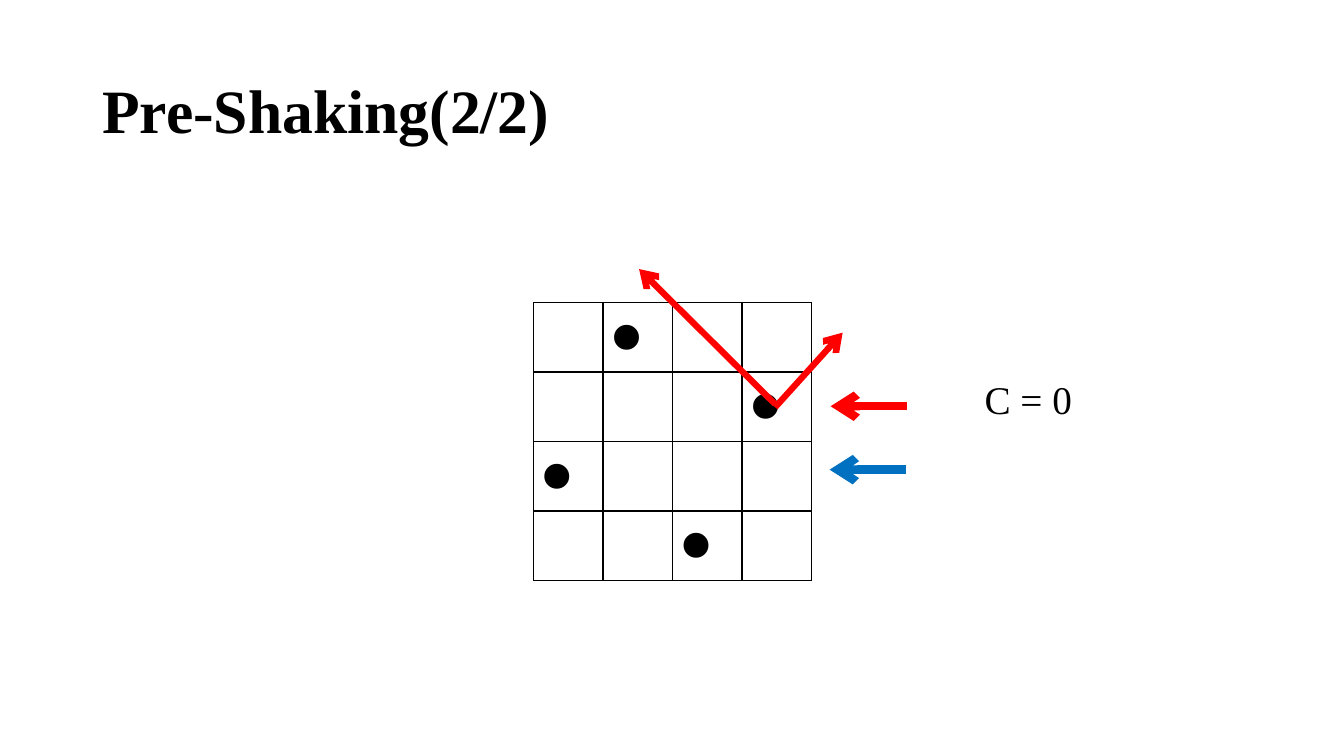
"""Build the Pre-Shaking slide: a four-queens board with attack arrows."""
from lxml import etree
from pptx import Presentation
from pptx.dml.color import RGBColor
from pptx.enum import shapes, text
from pptx.oxml import ns
from pptx.util import Pt

BLACK = RGBColor(0x00, 0x00, 0x00)
RED = RGBColor(0xFF, 0x00, 0x00)
BLUE = RGBColor(0x00, 0x70, 0xC0)
SERIF = "Times New Roman"
CELL = 49.68
QUEEN_COLUMNS = (1, 3, 0, 2)


def write(paragraph, words, color=BLACK, **font_format):
    """Write one formatted span into a paragraph."""
    span = paragraph.add_run()
    span.text = words
    span.font.color.rgb = color
    for name, value in font_format.items():
        setattr(span.font, name, value)


def add_label(page, words, left, top, width, height, layout, font_format):
    """Add a wrapped text box with one line of text."""
    box = page.shapes.add_textbox(Pt(left), Pt(top), Pt(width), Pt(height))
    frame = box.text_frame
    frame.word_wrap = True
    frame.vertical_anchor = layout["anchor"]
    paragraph = frame.paragraphs[0]
    paragraph.line_spacing = 0.9
    paragraph.space_before = Pt(layout["before"])
    write(paragraph, words, name=SERIF, **font_format)


def add_arrow(page, start, end, color, weight):
    """Add a straight arrow that points at its end."""
    arrow = page.shapes.add_connector(
        shapes.MSO_CONNECTOR.STRAIGHT, *(Pt(value) for value in (*start, *end)))
    arrow.line.color.rgb = color
    arrow.line.width = Pt(weight)
    properties = arrow.line._get_or_add_ln()
    etree.SubElement(properties, ns.qn("a:tailEnd"), type="arrow")
    etree.SubElement(arrow._element.spPr, ns.qn("a:effectLst"))


def add_borders(cell):
    """Draw a thin black line on every side of a cell."""
    properties = cell._tc.get_or_add_tcPr()
    for side in ("lnL", "lnR", "lnT", "lnB"):
        border = etree.SubElement(properties, ns.qn(f"a:{side}"), w=str(Pt(1)))
        fill = etree.SubElement(border, ns.qn("a:solidFill"))
        etree.SubElement(fill, ns.qn("a:srgbClr"), val=str(BLACK))


def add_board(page, left, top):
    """Add the board as a table with one queen in each row."""
    size = len(QUEEN_COLUMNS)
    board = page.shapes.add_table(
        size, size, Pt(left), Pt(top), Pt(size * CELL), Pt(size * CELL)).table
    board.first_row = board.horz_banding = False
    for column in board.columns:
        column.width = Pt(CELL)
    for row in board.rows:
        row.height = Pt(CELL)
    for cell in board.iter_cells():
        add_borders(cell)
        cell.fill.background()
    for row, column in enumerate(QUEEN_COLUMNS):
        paragraph = board.cell(row, column).text_frame.paragraphs[0]
        write(paragraph, "⚫", name="Calibri", size=Pt(32))


def main():
    """Build and save the deck."""
    deck = Presentation()
    deck.slide_width, deck.slide_height = Pt(960), Pt(540)
    page = deck.slides.add_slide(deck.slide_layouts[6])
    add_board(page, 381, 216)
    add_label(page, "Pre-Shaking(2/2)", 66, 28.8, 828, 104.4,
              {"anchor": text.MSO_ANCHOR.MIDDLE, "before": 0},
              {"size": Pt(44), "bold": True})
    add_arrow(page, (553.7, 290.9), (601.9, 237.6), RED, 4.5)
    add_arrow(page, (553.7, 288.7), (456.5, 192.2), RED, 4.5)
    add_arrow(page, (648, 290.2), (593.3, 290.2), RED, 6)
    add_label(page, "C = 0", 696.2, 268.6, 105, 45.4,
              {"anchor": text.MSO_ANCHOR.TOP, "before": 10},
              {"size": Pt(28)})
    add_arrow(page, (647.3, 335.5), (592.6, 335.5), BLUE, 6)
    deck.save("out.pptx")


if __name__ == "__main__":
    main()
